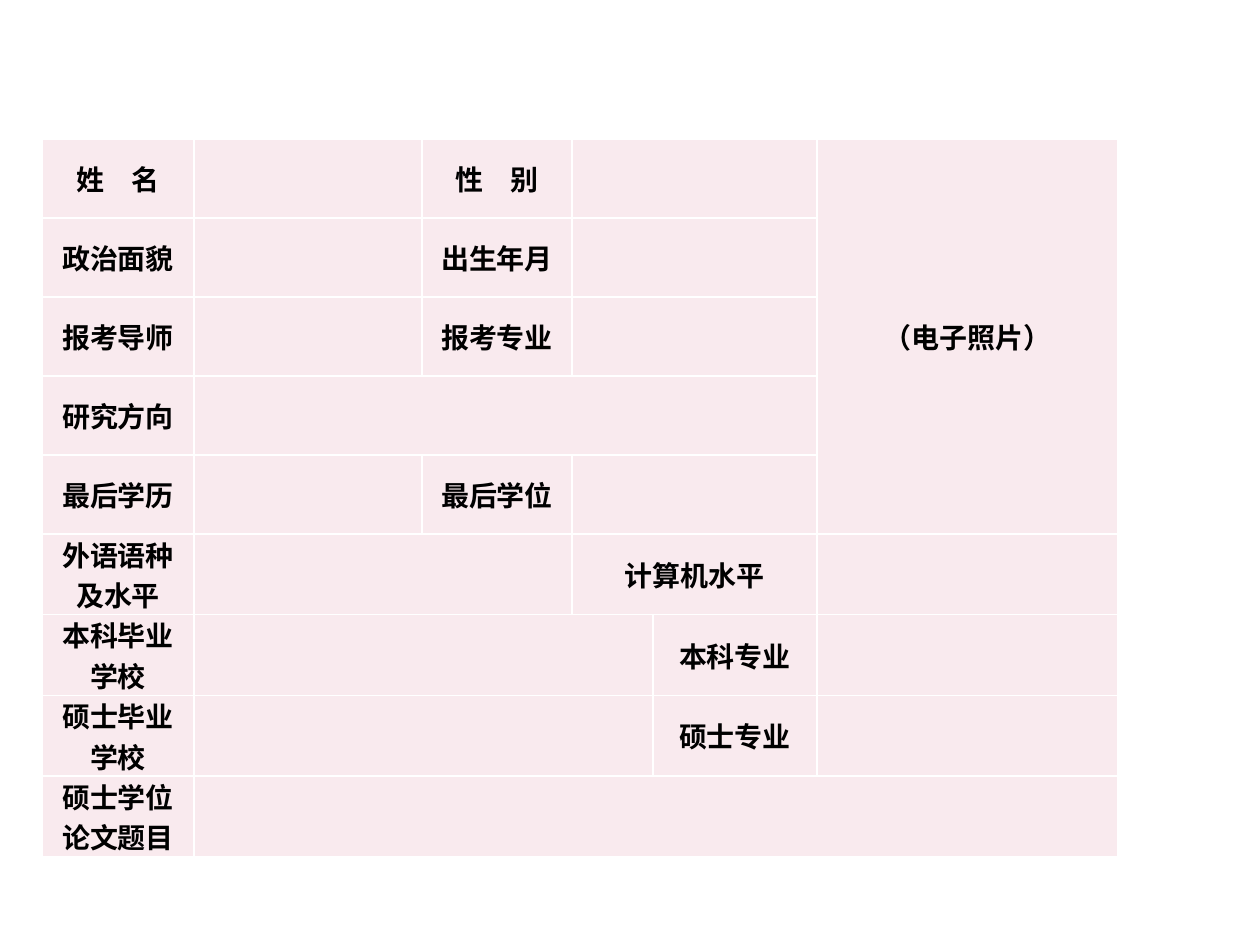
from dataclasses import dataclass

from lxml.etree import SubElement
from pptx import Presentation
from pptx.dml.color import RGBColor
from pptx.enum.text import MSO_ANCHOR as Anchor, PP_ALIGN as Align
from pptx.oxml.ns import qn
from pptx.util import Emu, Pt


@dataclass(frozen=True)
class Theme:
    font: str = "Noto Sans CJK SC"
    label_size: int = 16
    ink: str = "000000"
    cell: str = "F9EAEE"
    rule: str = "FFFFFF"
    rule_width: int = 1


THEME = Theme()
COLUMNS = [152, 228, 150, 81, 164, 301]
ROWS = [79] * 5 + [76] * 4
PHOTO_COLUMN, PHOTO_ROWS = 5, 5
PHOTO_LABEL = "（电子照片）"
FORM = [
    [("姓　名", 1), ("", 1), ("性　别", 1), ("", 2)],
    [("政治面貌", 1), ("", 1), ("出生年月", 1), ("", 2)],
    [("报考导师", 1), ("", 1), ("报考专业", 1), ("", 2)],
    [("研究方向", 1), ("", 4)],
    [("最后学历", 1), ("", 1), ("最后学位", 1), ("", 2)],
    [("外语语种\n及水平", 1), ("", 2), ("计算机水平", 2), ("", 1)],
    [("本科毕业\n学校", 1), ("", 3), ("本科专业", 1), ("", 1)],
    [("硕士毕业\n学校", 1), ("", 3), ("硕士专业", 1), ("", 1)],
    [("硕士学位论文题目", 1), ("", 5)],
]


def px(length):
    return Emu(round(length * 914400 / 126))


def style_cell(cell):
    cell.margin_left = cell.margin_right = px(10)
    cell.margin_top = cell.margin_bottom = 0
    cell.vertical_anchor = Anchor.MIDDLE
    properties = cell._tc.get_or_add_tcPr()
    for side in ("a:lnL", "a:lnR", "a:lnT", "a:lnB"):
        border = SubElement(properties, qn(side), w=str(Pt(THEME.rule_width)))
        border_fill = SubElement(border, qn("a:solidFill"))
        SubElement(border_fill, qn("a:srgbClr"), val=THEME.rule)
    cell.fill.solid()
    cell.fill.fore_color.rgb = RGBColor.from_string(THEME.cell)


def write_label(cell, label):
    cell.text = label
    for paragraph in cell.text_frame.paragraphs:
        paragraph.alignment = Align.CENTER
        font = paragraph.font
        font.size = Pt(THEME.label_size)
        font.bold = True
        font.color.rgb = RGBColor.from_string(THEME.ink)
        font.name = THEME.font
        defaults = paragraph._p.pPr.find(qn("a:defRPr"))
        SubElement(defaults, qn("a:ea"), typeface=THEME.font)


def add_form_grid(slide):
    frame = slide.shapes.add_table(
        len(ROWS), len(COLUMNS), px(42), px(139), px(sum(COLUMNS)), px(sum(ROWS))
    )
    grid = frame.table
    grid.first_row = grid.horz_banding = False
    for column, width in zip(grid.columns, COLUMNS):
        column.width = px(width)
    for row, height in zip(grid.rows, ROWS):
        row.height = px(height)
    for cell in grid.iter_cells():
        style_cell(cell)
    return grid


def fill_form(grid):
    for row, fields in enumerate(FORM):
        column = 0
        for label, span in fields:
            cell = grid.cell(row, column)
            if span > 1:
                cell.merge(grid.cell(row, column + span - 1))
            if label:
                write_label(cell, label)
            column += span
    photo = grid.cell(0, PHOTO_COLUMN)
    photo.merge(grid.cell(PHOTO_ROWS - 1, PHOTO_COLUMN))
    write_label(photo, PHOTO_LABEL)


def main():
    deck = Presentation()
    deck.slide_width, deck.slide_height = px(1260), px(945)
    slide = deck.slides.add_slide(deck.slide_layouts[6])
    fill_form(add_form_grid(slide))
    deck.save("out.pptx")


if __name__ == "__main__":
    main()
